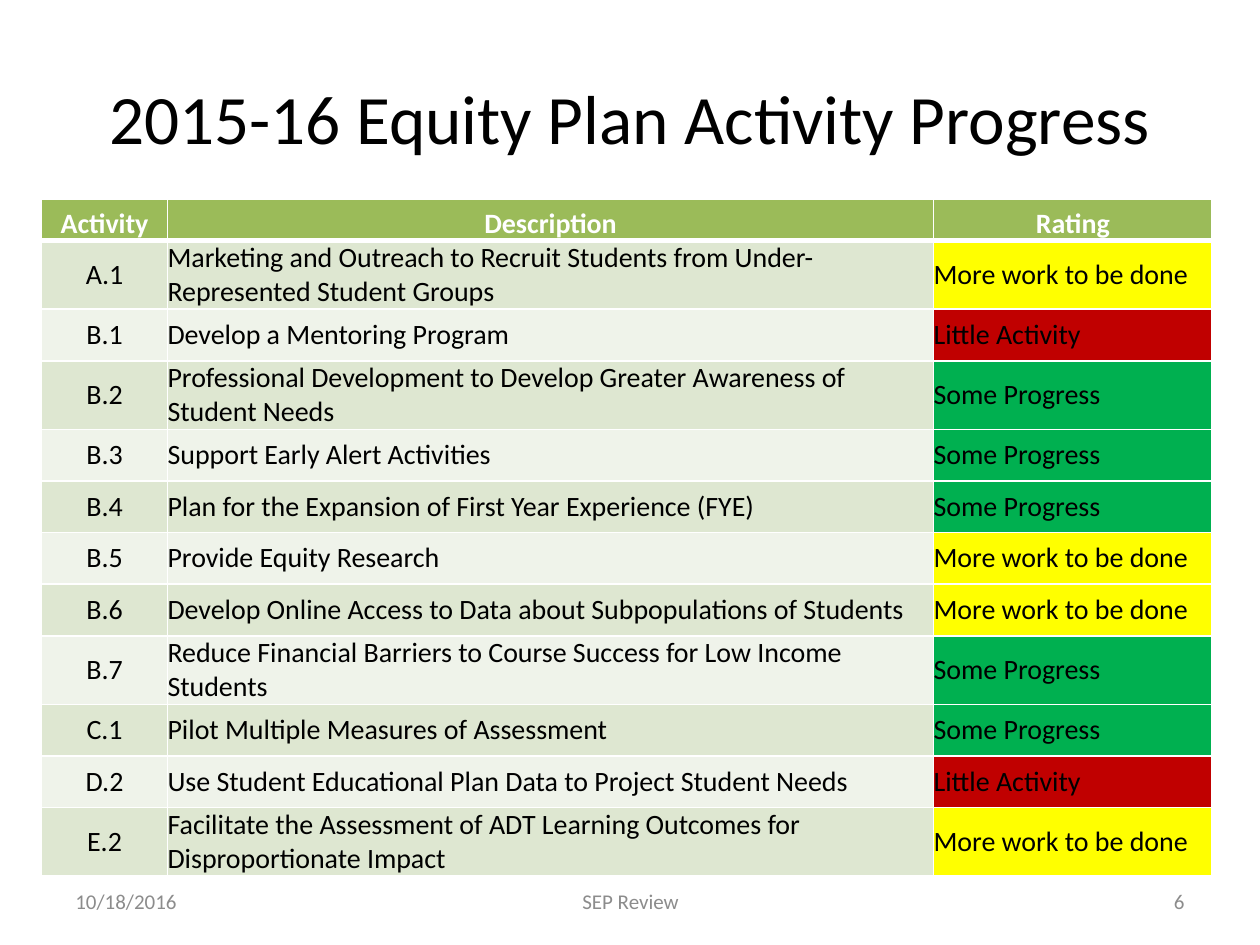
from lxml import etree
from pptx import Presentation
from pptx.dml.color import RGBColor
from pptx.enum.text import MSO_ANCHOR as Anchor, PP_ALIGN as Align
from pptx.oxml.ns import qn
from pptx.util import Inches, Pt

WHITE = RGBColor(0xFF, 0xFF, 0xFF)
BLACK = RGBColor(0x00, 0x00, 0x00)
GRAY = RGBColor(0x8C, 0x8C, 0x8C)
OLIVE = RGBColor(0x9B, 0xBB, 0x59)
BANDS = [RGBColor(0xDE, 0xE7, 0xD1), RGBColor(0xEF, 0xF3, 0xEA)]

MORE, LITTLE, SOME = "More work to be done", "Little Activity", "Some Progress"
RATINGS = {
    MORE: RGBColor(0xFF, 0xFF, 0x00),
    LITTLE: RGBColor(0xC0, 0x00, 0x00),
    SOME: RGBColor(0x00, 0xB0, 0x50),
}
ROWS = [
    ("Activity", "Description", "Rating"),
    ("A.1", "Marketing and Outreach to Recruit Students from Under-Represented Student Groups", MORE),
    ("B.1", "Develop a Mentoring Program", LITTLE),
    ("B.2", "Professional Development to Develop Greater Awareness of Student Needs", SOME),
    ("B.3", "Support Early Alert Activities", SOME),
    ("B.4", "Plan for the Expansion of First Year Experience (FYE)", SOME),
    ("B.5", "Provide Equity Research", MORE),
    ("B.6", "Develop Online Access to Data about Subpopulations of Students", MORE),
    ("B.7", "Reduce Financial Barriers to Course Success for Low Income Students", SOME),
    ("C.1", "Pilot Multiple Measures of Assessment", SOME),
    ("D.2", "Use Student Educational Plan Data to Project Student Needs", LITTLE),
    ("E.2", "Facilitate the Assessment of ADT Learning Outcomes for Disproportionate Impact", MORE),
]


def write(frame, text, size, color, align, bold=False):
    frame.text = text
    para = frame.paragraphs[0]
    para.alignment = align
    font = para.runs[0].font
    font.name, font.size, font.bold = "Calibri", Pt(size), bold
    font.color.rgb = color


def border(cell, side, width):
    line = etree.SubElement(cell._tc.get_or_add_tcPr(), qn(f"a:ln{side}"), w=str(Pt(width)))
    fill = etree.SubElement(line, qn("a:solidFill"))
    etree.SubElement(fill, qn("a:srgbClr"), val=str(WHITE))


prs = Presentation()
prs.slide_width, prs.slide_height = Inches(10), Inches(7.5)
slide = prs.slides.add_slide(prs.slide_layouts[5])

# Title
title = slide.shapes.title
title.left, title.top = Inches(0.5), Inches(0.3)
title.width, title.height = Inches(9), Inches(1.25)
write(title.text_frame, "2015-16 Equity Plan Activity Progress", 39.6, BLACK, Align.CENTER)
title.text_frame.vertical_anchor = Anchor.MIDDLE

# Activity table
table = slide.shapes.add_table(
    len(ROWS), 3, Inches(0.33), Inches(1.58), Inches(9.29), Inches(4.84)
).table
for col, width in zip(table.columns, (1, 6.08, 2.21)):
    col.width = Inches(width)

for r, row in enumerate(ROWS):
    head = r == 0
    table.rows[r].height = Inches(0.33 if head else 0.41)
    for c, text in enumerate(row):
        cell = table.cell(r, c)
        cell.margin_left = cell.margin_right = cell.margin_top = cell.margin_bottom = 0
        cell.vertical_anchor = Anchor.BOTTOM if head else Anchor.MIDDLE
        align = Align.CENTER if head or c == 0 else Align.LEFT
        write(cell.text_frame, text, 16, WHITE if head else BLACK, align, head)
        # The rule under the header is thicker than the others
        for side in "LRTB":
            thick = (r, side) in ((0, "B"), (1, "T"))
            border(cell, side, 3 if thick else 1)
        cell.fill.solid()
        band = OLIVE if head else BANDS[(r - 1) % 2]
        cell.fill.fore_color.rgb = RATINGS.get(text, band)

# Footer: date, name and page number
for left, width, text, align in (
    (0.5, 2.33, "10/18/2016", Align.LEFT),
    (3.42, 3.17, "SEP Review", Align.CENTER),
    (7.17, 2.33, "6", Align.RIGHT),
):
    box = slide.shapes.add_textbox(Inches(left), Inches(6.95), Inches(width), Inches(0.4))
    box.text_frame.word_wrap = True
    box.text_frame.vertical_anchor = Anchor.MIDDLE
    write(box.text_frame, text, 12, GRAY, align)

prs.save("out.pptx")
